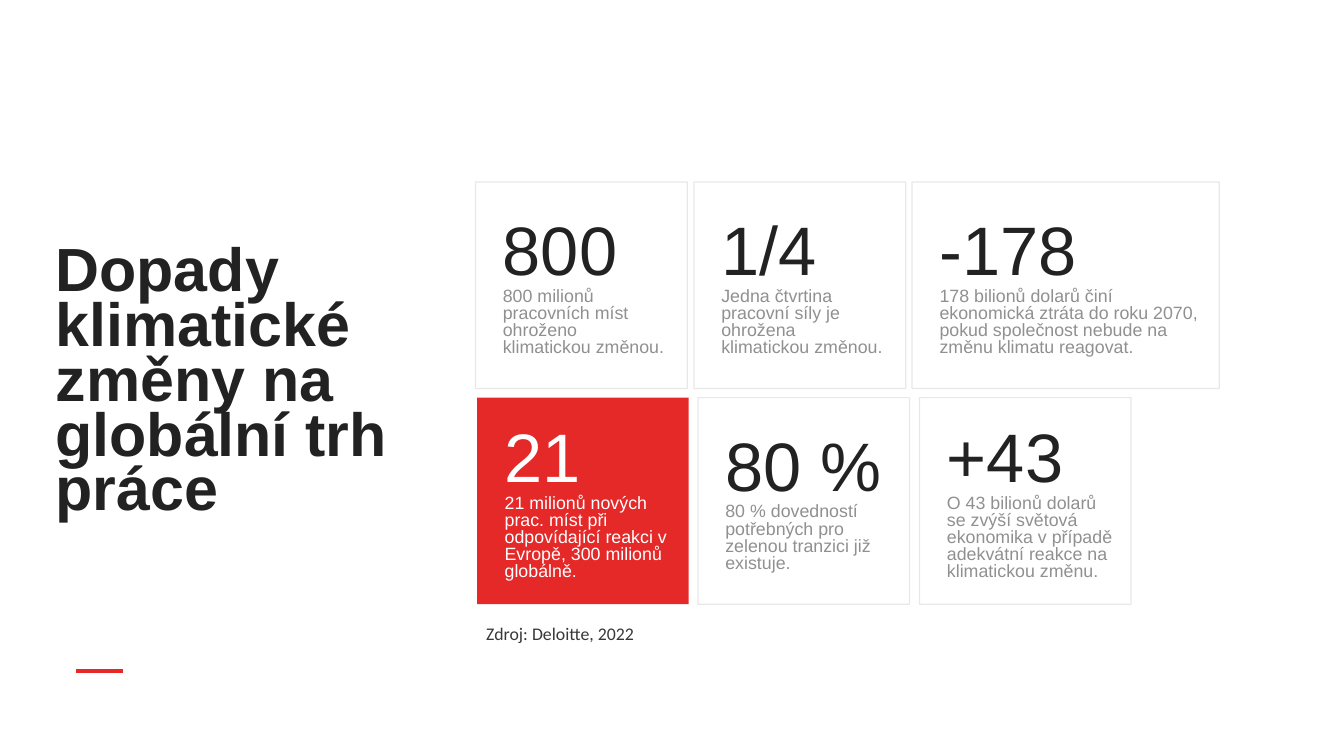
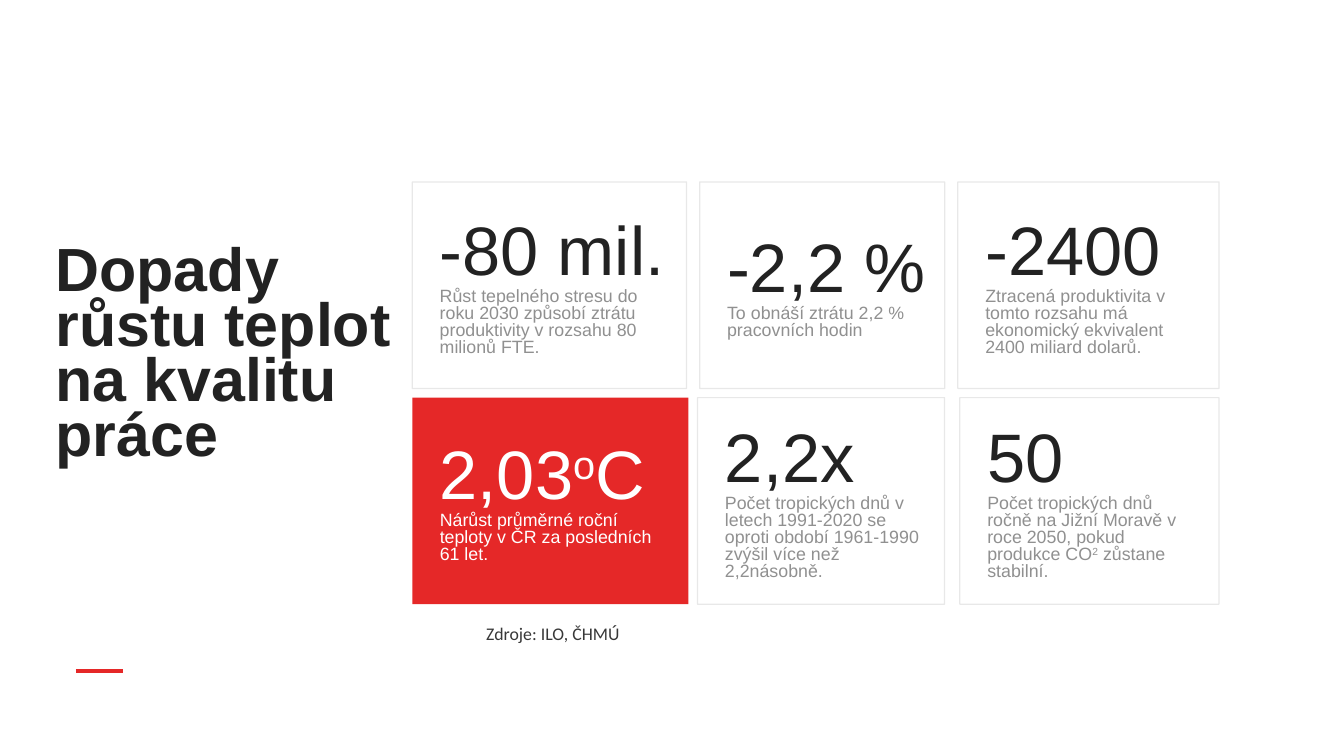
import dataclasses

import lxml.etree
import pptx
import pptx.dml.color
import pptx.enum.shapes
import pptx.enum.text
import pptx.oxml.ns
import pptx.util

Pt = pptx.util.Pt
RGB = pptx.dml.color.RGBColor.from_string
qn = pptx.oxml.ns.qn


@dataclasses.dataclass(frozen=True)
class Theme:
    dark: str = "222222"
    grey: str = "909090"
    source: str = "383838"
    red: str = "E52828"
    white: str = "FFFFFF"
    font: str = "Arial"
    source_font: str = "Calibri"
    title_size: int = 48
    figure_size: int = 54
    body_size: int = 14


class Deck:
    """Holds the theme and the current slide."""

    card_height = 162.7
    row_tops = (143.3, 313.2)

    def __init__(self, theme):
        self.theme = theme
        self.presentation = pptx.Presentation()
        self.presentation.slide_width = Pt(1058.4)
        self.presentation.slide_height = Pt(595.44)
        self.slide = None

    def new_slide(self, title):
        layout = self.presentation.slide_layouts[6]
        self.slide = self.presentation.slides.add_slide(layout)
        self.accent_line()
        self.title(title)

    def accent_line(self):
        line = self.slide.shapes.add_connector(
            pptx.enum.shapes.MSO_CONNECTOR.STRAIGHT,
            Pt(59.8), Pt(528.5), Pt(97.2), Pt(528.5))
        line.line.color.rgb = RGB(self.theme.red)
        line.line.width = Pt(3)
        lxml.etree.SubElement(line._element.spPr, qn("a:effectLst"))

    def add_runs(self, paragraph, pieces, size, color, font=None, bold=False):
        """Adds the pieces as runs; every second piece is superscript."""
        for index, text in enumerate(pieces):
            run = paragraph.add_run()
            run.text = text
            run.font.name = font or self.theme.font
            run.font.size = Pt(size)
            run.font.bold = bold
            run.font.color.rgb = RGB(color)
            if index % 2:
                run._r.get_or_add_rPr().set("baseline", "30000")

    def text_box(self, left, top, width, height):
        box = self.slide.shapes.add_textbox(
            Pt(left), Pt(top), Pt(width), Pt(height))
        box.text_frame.word_wrap = True
        return box.text_frame

    def title(self, text):
        paragraph = self.text_box(36.7, 191.5, 288.7, 188.6).paragraphs[0]
        paragraph.line_spacing = 0.75
        self.add_runs(paragraph, [text], self.theme.title_size, self.theme.dark, bold=True)

    def source(self, text):
        frame = self.text_box(375.8, 486.7, 263.5, 24.5)
        frame.auto_size = pptx.enum.text.MSO_AUTO_SIZE.SHAPE_TO_FIT_TEXT
        self.add_runs(frame.paragraphs[0], [text], self.theme.body_size,
                      self.theme.source, self.theme.source_font)

    def card(self, left, top, width, figure, body, highlighted):
        theme = self.theme
        shape = self.slide.shapes.add_shape(
            pptx.enum.shapes.MSO_SHAPE.RECTANGLE,
            Pt(left), Pt(top), Pt(width), Pt(self.card_height))
        shape.shadow.inherit = False
        if highlighted:
            shape.fill.solid()
            shape.fill.fore_color.rgb = RGB(theme.red)
            shape.line.fill.background()
        else:
            shape.fill.background()
            shape.line.width = Pt(1)
            shape.line.color.rgb = RGB(theme.dark)
            # Outline at 10 % opacity
            color = shape._element.spPr.find(".//" + qn("a:ln")).find(".//" + qn("a:srgbClr"))
            lxml.etree.SubElement(color, qn("a:alpha")).set("val", "10000")

        frame = shape.text_frame
        frame.word_wrap = True
        frame.vertical_anchor = pptx.enum.text.MSO_ANCHOR.MIDDLE
        frame.margin_left, frame.margin_top = Pt(21.6), Pt(14.4)
        frame.margin_right, frame.margin_bottom = Pt(14.4), Pt(7.2)
        lines = (
            (frame.paragraphs[0], figure, theme.figure_size, theme.dark),
            (frame.add_paragraph(), body, theme.body_size, theme.grey),
        )
        for paragraph, pieces, size, color in lines:
            paragraph.alignment = pptx.enum.text.PP_ALIGN.LEFT
            paragraph.line_spacing = 0.8
            self.add_runs(paragraph, pieces, size, theme.white if highlighted else color)

    def card_row(self, row, left, gaps, cards):
        """Places cards side by side; the first one of the lower row is red."""
        for index, (width, figure, body) in enumerate(cards):
            self.card(left, self.row_tops[row], width, figure, body,
                      highlighted=row == 1 and index == 0)
            left += width + (*gaps, 0)[index]


def main():
    deck = Deck(Theme())

    # Climate change and the labour market
    deck.new_slide("Dopady klimatické změny na globální trh práce")
    deck.card_row(0, 374.4, (5.3, 5), [
        (166.8, ["800"], ["800 milionů pracovních míst ohroženo klimatickou změnou."]),
        (166.8, ["1/4"], ["Jedna čtvrtina pracovní síly je ohrožena klimatickou změnou."]),
        (241.9, ["-178"], ["178 bilionů dolarů činí ekonomická ztráta do roku 2070, "
                           "pokud společnost nebude na změnu klimatu reagovat."]),
    ])
    deck.card_row(1, 375.8, (7.2, 7.9), [
        (166.6, ["21"], ["21 milionů nových prac. míst při odpovídající reakci "
                         "v Evropě, 300 milionů globálně."]),
        (166.6, ["80 %"], ["80 % dovedností potřebných pro zelenou tranzici již existuje."]),
        (166.6, ["+43"], ["O 43 bilionů dolarů se zvýší světová ekonomika v případě "
                          "adekvátní reakce na klimatickou změnu."]),
    ])
    deck.source("Zdroj: Deloitte, 2022")

    # Rising temperatures and the quality of work
    deck.new_slide("Dopady růstu teplot na kvalitu práce")
    deck.card_row(0, 324.7, (10.3, 10.3), [
        (216, ["-80 mil."], ["Růst tepelného stresu do roku 2030 způsobí ztrátu "
                             "produktivity v rozsahu 80 milionů FTE."]),
        (193, ["-2,2 %"], ["To obnáší ztrátu 2,2 % pracovních hodin"]),
        (205.7, ["-2400"], ["Ztracená produktivita v tomto rozsahu má ekonomický "
                            "ekvivalent 2400 miliard dolarů."]),
    ])
    deck.card_row(1, 324.7, (7.2, 12), [
        (217.4, ["2,03", "o", "C"], ["Nárůst průměrné roční teploty v ČR za posledních 61 let."]),
        (194.6, ["2,2x"], ["Počet tropických dnů v letech 1991-2020 se oproti období "
                           "1961-1990 zvýšil více než 2,2násobně."]),
        (204, ["50"], ["Počet tropických dnů ročně na Jižní Moravě v roce 2050, "
                       "pokud produkce CO", "2", " zůstane stabilní."]),
    ])
    deck.source("Zdroje: ILO, ČHMÚ")

    deck.presentation.save("out.pptx")


if __name__ == "__main__":
    main()
